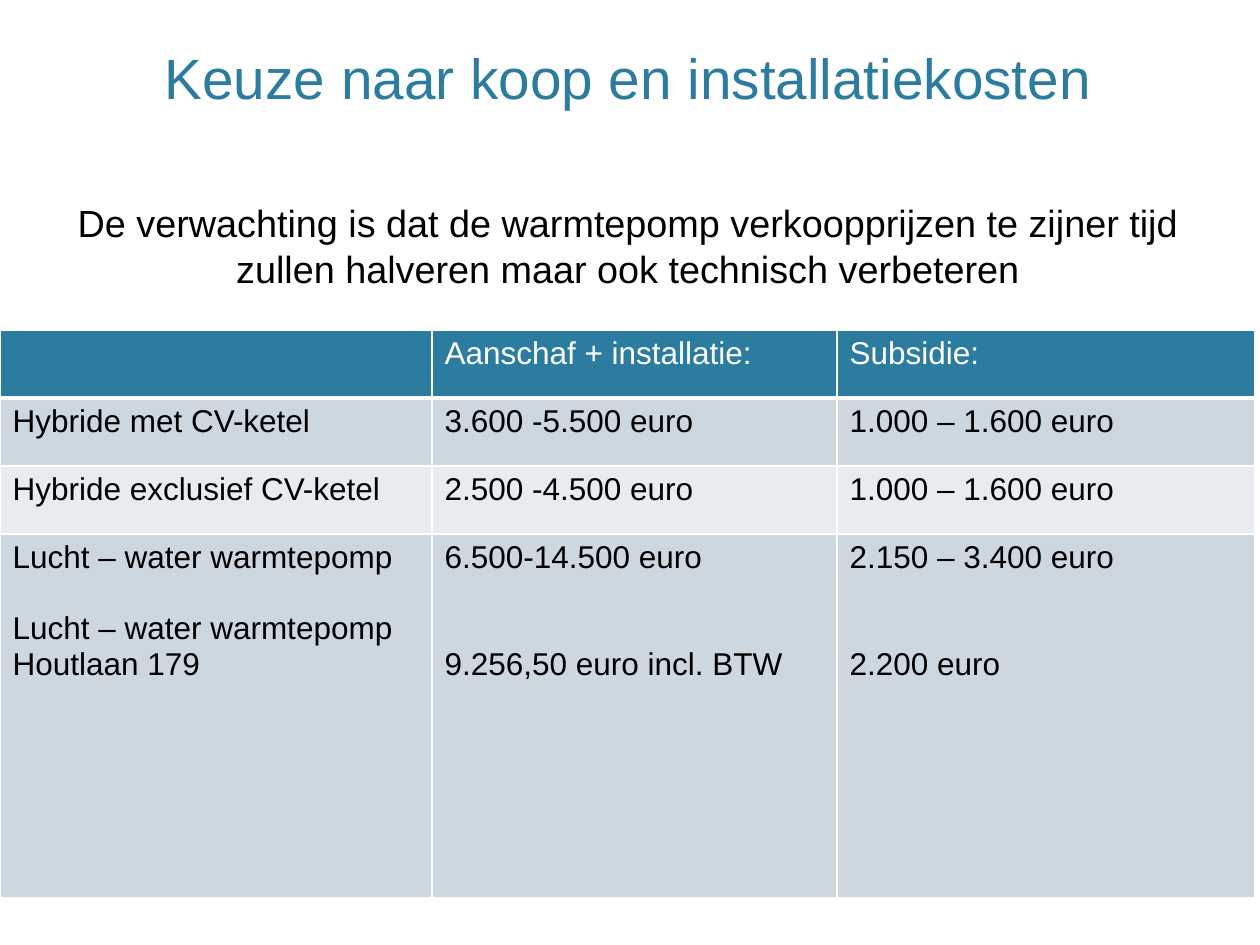
"""Builds a slide on heat pump prices and subsidies."""
import pptx
import pptx.util
import pptx.dml.color
import pptx.enum.text
import pptx.oxml
import pptx.oxml.ns

RGB = pptx.dml.color.RGBColor
Pt = pptx.util.Pt
BLUE = RGB(0x2C, 0x7C, 0x9F)
WHITE = RGB(0xFF, 0xFF, 0xFF)
BLACK = RGB(0, 0, 0)
DARK = RGB(0xCD, 0xD7, 0xDF)
LIGHT = RGB(0xE8, 0xEC, 0xF0)
SCALE = 914400 // 126

TITLE = [
    ("Keuze naar koop en installatiekosten", 32.4, BLUE, 0),
    ("De verwachting is dat de warmtepomp verkoopprijzen te zijner tijd "
     "zullen halveren maar ook technisch verbeteren", 21.6, BLACK, 51),
]
COLS = [432, 405, 418]
ROWS = [68, 68, 68, 364]
LINE = 20.5
CELLS = [
    [[], [("Aanschaf + installatie:", 0)], [("Subsidie:", 0)]],
    [[("Hybride met CV-ketel", 0)], [("3.600 -5.500 euro", 0)],
     [("1.000 – 1.600 euro", 0)]],
    [[("Hybride exclusief CV-ketel", 0)], [("2.500 -4.500 euro", 0)],
     [("1.000 – 1.600 euro", 0)]],
    [[("Lucht – water warmtepomp", 0), ("Lucht – water warmtepomp", 1),
      ("Houtlaan 179", 0)],
     [("6.500-14.500 euro", 0), ("9.256,50 euro incl. BTW", 2)],
     [("2.150 – 3.400 euro", 0), ("2.200 euro", 2)]],
]


class Deck:
    def __init__(self, wide, high):
        self.font = "Arial"
        self.prs = pptx.Presentation()
        self.prs.slide_width = wide * SCALE
        self.prs.slide_height = high * SCALE
        self.slide = self.prs.slides.add_slide(self.prs.slide_layouts[5])

    def put(self, frame, items, align):
        for i, (text, size, color, gap) in enumerate(items):
            para = frame.paragraphs[0] if i == 0 else frame.add_paragraph()
            para.text = text
            para.alignment = align
            para.space_before = Pt(gap)
            font = para.runs[0].font
            font.name, font.size = self.font, Pt(size)
            font.color.rgb = color

    def title(self, items, left, top, wide, high):
        box = self.slide.shapes.title
        box.left, box.top = left * SCALE, top * SCALE
        box.width, box.height = wide * SCALE, high * SCALE
        frame = box.text_frame
        frame.word_wrap = True
        frame.auto_size = pptx.enum.text.MSO_AUTO_SIZE.NONE
        frame.vertical_anchor = pptx.enum.text.MSO_ANCHOR.BOTTOM
        self.put(frame, items, pptx.enum.text.PP_ALIGN.CENTER)

    def edge(self, cell, head):
        props = cell._tc.get_or_add_tcPr()
        for side in "LRTB":
            width = Pt(3 if head and side == "B" else 1)
            props.append(pptx.oxml.parse_xml(
                f'<a:ln{side} {pptx.oxml.ns.nsdecls("a")} w="{width}">'
                f'<a:solidFill><a:srgbClr val="{WHITE}"/></a:solidFill>'
                f'</a:ln{side}>'))

    def table(self, cells, cols, rows, left, top):
        grid = self.slide.shapes.add_table(
            len(rows), len(cols), left * SCALE, top * SCALE,
            sum(cols) * SCALE, sum(rows) * SCALE).table
        for col, wide in zip(grid.columns, cols):
            col.width = wide * SCALE
        for r, high in enumerate(rows):
            grid.rows[r].height = high * SCALE
            head = r == 0
            fill = BLUE if head else DARK if r % 2 else LIGHT
            color = WHITE if head else BLACK
            for c, lines in enumerate(cells[r]):
                cell = grid.cell(r, c)
                self.edge(cell, head)
                cell.fill.solid()
                cell.fill.fore_color.rgb = fill
                items = [(text, 18, color, skip * LINE)
                         for text, skip in lines]
                self.put(cell.text_frame, items,
                         pptx.enum.text.PP_ALIGN.LEFT)


def main():
    deck = Deck(1260, 945)
    deck.title(TITLE, 23, 38, 1210, 259)
    deck.table(CELLS, COLS, ROWS, 0, 330)
    deck.prs.save("out.pptx")


if __name__ == "__main__":
    main()
